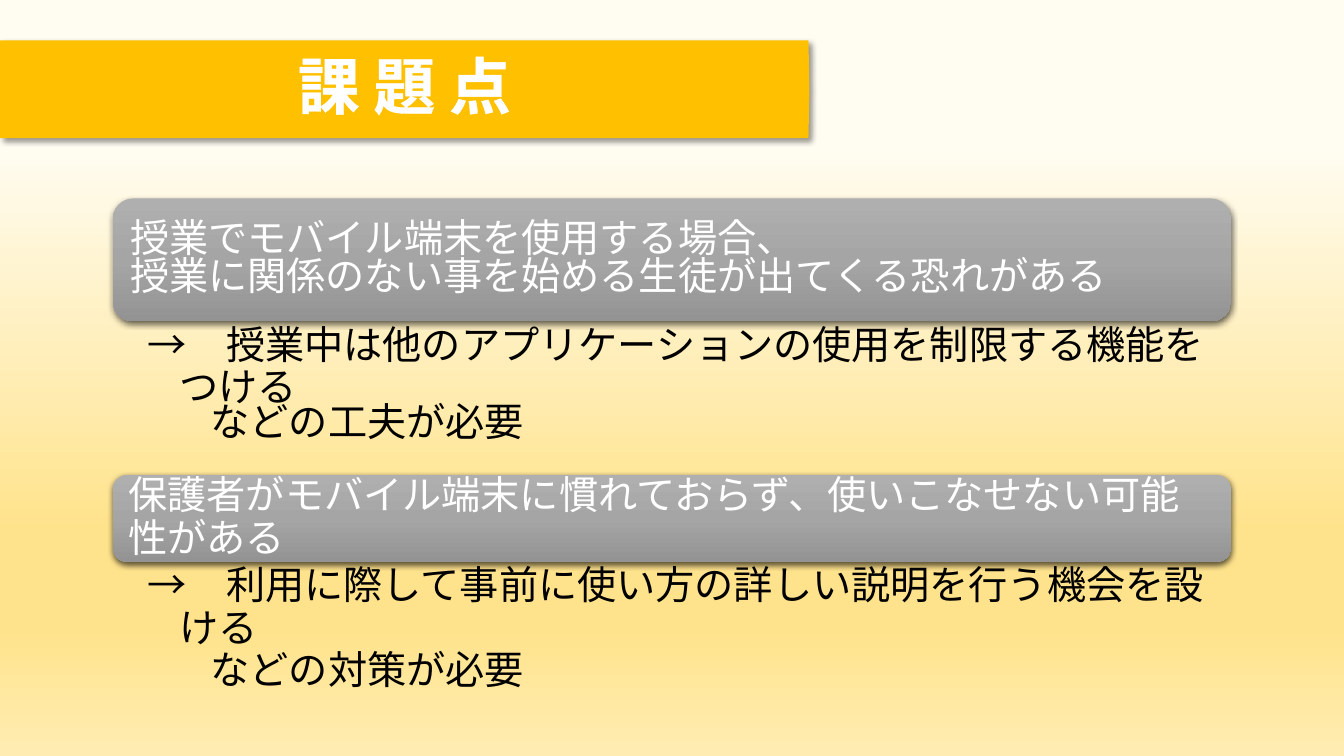
from dataclasses import dataclass

from lxml.etree import SubElement
from pptx import Presentation
from pptx.dml.color import RGBColor
from pptx.dml.fill import FillFormat
from pptx.enum.lang import MSO_LANGUAGE_ID
from pptx.enum.shapes import MSO_SHAPE
from pptx.enum.text import MSO_ANCHOR, PP_ALIGN
from pptx.oxml.ns import qn
from pptx.oxml.xmlchemy import BaseOxmlElement
from pptx.shapes.autoshape import Shape
from pptx.slide import Slide
from pptx.util import Cm, Pt

FONT = "Noto Sans CJK JP"
COLORS = {"banner": "FFC000", "light": "FFFFFF", "dark": "000000", "shadow": "000000"}
BACKGROUND_STOPS = [(19, "FFFCF2"), (70, "FFE38C"), (83, "FFE38C"), (100, "FFECB2")]
PANEL_STOPS = [(0, "AFAFAF"), (50, "A5A5A5"), (100, "939393")]

PANEL_LEFT, PANEL_WIDTH = 2.84, 28.19
PANEL_INSETS = (0.3, 0.3, 0.3, 0.3)
REMEDY_INSETS = (0.89, 0.1, 0.56, 0.1)
INDENT_STEP = 0.79


@dataclass(frozen=True)
class Box:
    """A frame in centimetres."""
    left: float
    top: float
    width: float
    height: float

    def emu(self) -> tuple[Cm, Cm, Cm, Cm]:
        return Cm(self.left), Cm(self.top), Cm(self.width), Cm(self.height)


@dataclass(frozen=True)
class Line:
    text: str
    spacing: float = 0.9
    level: int = 0
    hanging: float = 0


@dataclass(frozen=True)
class Shadow:
    opacity: int
    blur: float
    distance: float
    angle: int


@dataclass(frozen=True)
class Issue:
    top: float
    panel_height: float
    remedy_height: float
    text_margin: float
    problem: list[Line]
    remedy: list[Line]


BANNER_SHADOW = Shadow(40, 4, 3, 45)
PANEL_SHADOW = Shadow(63, 4.5, 1.5, 90)

ISSUES = [
    Issue(
        5.0, 3.1, 3.86, 0.14,
        [Line("授業でモバイル端末を使用する場合、", 0.8),
         Line("授業に関係のない事を始める生徒が出てくる恐れがある", 0.8)],
        [Line("→　授業中は他のアプリケーションの使用を制限する機能をつける", 0.9, 1, INDENT_STEP),
         Line("などの工夫が必要", 0.7, 2)],
    ),
    Issue(
        11.97, 2.19, 3.23, 0.1,
        [Line("保護者がモバイル端末に慣れておらず、使いこなせない可能性がある")],
        [Line("→　利用に際して事前に使い方の詳しい説明を行う機会を設ける", 0.9, 1, INDENT_STEP),
         Line("などの対策が必要", 0.9, 2)],
    ),
]


def set_gradient(fill: FillFormat, owner: BaseOxmlElement, stops: list[tuple[int, str]]) -> None:
    """Fill from top to bottom with any number of (percent, colour) stops."""
    fill.gradient()
    fill.gradient_angle = 270
    stop_list = owner.find(".//" + qn("a:gsLst"))
    for old_stop in list(stop_list):
        stop_list.remove(old_stop)
    for percent, color in stops:
        stop = SubElement(stop_list, qn("a:gs"), pos=str(percent * 1000))
        SubElement(stop, qn("a:srgbClr"), val=color)


def add_shadow(shape: Shape, shadow: Shadow) -> None:
    shape.shadow.inherit = False
    effects = shape.element.find(".//" + qn("a:effectLst"))
    outer = SubElement(
        effects, qn("a:outerShdw"), blurRad=str(Pt(shadow.blur)), dist=str(Pt(shadow.distance)),
        dir=str(shadow.angle * 60000), algn="ctr", rotWithShape="0",
    )
    color = SubElement(outer, qn("a:srgbClr"), val=COLORS["shadow"])
    SubElement(color, qn("a:alpha"), val=str(shadow.opacity * 1000))


def write_lines(shape: Shape, lines: list[Line], color: str, size: float = 28) -> None:
    frame = shape.text_frame
    frame.word_wrap = True
    frame.text = "\n".join(line.text for line in lines)
    for paragraph, line in zip(frame.paragraphs, lines):
        paragraph.alignment = PP_ALIGN.LEFT
        paragraph.line_spacing = line.spacing
        paragraph.level = line.level
        properties = paragraph._p.get_or_add_pPr()
        properties.set("marL", str(Cm(line.level * INDENT_STEP)))
        properties.set("indent", str(Cm(-line.hanging)))
        for run in paragraph.runs:
            run.font.size = Pt(size)
            run.font.name = FONT
            run.font.language_id = MSO_LANGUAGE_ID.JAPANESE
            run.font.color.rgb = RGBColor.from_string(COLORS[color])
            SubElement(run._r.get_or_add_rPr(), qn("a:ea"), typeface=FONT)


def add_banner(slide: Slide, title: str) -> None:
    banner = slide.shapes.add_shape(MSO_SHAPE.PENTAGON, *Box(0, 1.02, 20.4, 2.46).emu())
    banner.adjustments[0] = 0.01
    banner.fill.solid()
    banner.fill.fore_color.rgb = RGBColor.from_string(COLORS["banner"])
    banner.line.fill.background()
    add_shadow(banner, BANNER_SHADOW)
    write_lines(banner, [Line(title)], "light", 44)
    banner.text_frame.vertical_anchor = MSO_ANCHOR.MIDDLE
    heading = banner.text_frame.paragraphs[0]
    heading.alignment = PP_ALIGN.CENTER
    heading.runs[0].font.bold = True
    properties = heading.runs[0]._r.get_or_add_rPr()
    outline = SubElement(properties, qn("a:ln"), w=str(Pt(1.5)))
    SubElement(SubElement(outline, qn("a:solidFill")), qn("a:srgbClr"), val=COLORS["light"])
    properties.insert(0, outline)


def add_text(slide: Slide, box: Box, lines: list[Line], color: str,
             insets: tuple[float, float, float, float], anchor: MSO_ANCHOR) -> None:
    text = slide.shapes.add_textbox(*box.emu())
    frame = text.text_frame
    frame.margin_left, frame.margin_top, frame.margin_right, frame.margin_bottom = map(Cm, insets)
    frame.vertical_anchor = anchor
    write_lines(text, lines, color)


def add_issue(slide: Slide, issue: Issue) -> None:
    """Draw the problem on its grey panel, with the remedy below."""
    frame = Box(PANEL_LEFT, issue.top, PANEL_WIDTH, issue.panel_height)
    panel = slide.shapes.add_shape(MSO_SHAPE.ROUNDED_RECTANGLE, *frame.emu())
    set_gradient(panel.fill, panel.element, PANEL_STOPS)
    panel.line.fill.background()
    add_shadow(panel, PANEL_SHADOW)

    margin = issue.text_margin
    problem_box = Box(frame.left + margin, frame.top + margin,
                      frame.width - 2 * margin, frame.height - 2 * margin)
    add_text(slide, problem_box, issue.problem, "light", PANEL_INSETS, MSO_ANCHOR.MIDDLE)
    remedy_box = Box(frame.left, frame.top + frame.height, frame.width, issue.remedy_height)
    add_text(slide, remedy_box, issue.remedy, "dark", REMEDY_INSETS, MSO_ANCHOR.TOP)


def main() -> None:
    presentation = Presentation()
    presentation.slide_width, presentation.slide_height = Cm(33.87), Cm(19.05)
    slide = presentation.slides.add_slide(presentation.slide_layouts[6])
    set_gradient(slide.background.fill, slide.element, BACKGROUND_STOPS)
    add_banner(slide, "課 題 点")
    for issue in ISSUES:
        add_issue(slide, issue)
    presentation.save("out.pptx")


if __name__ == "__main__":
    main()
